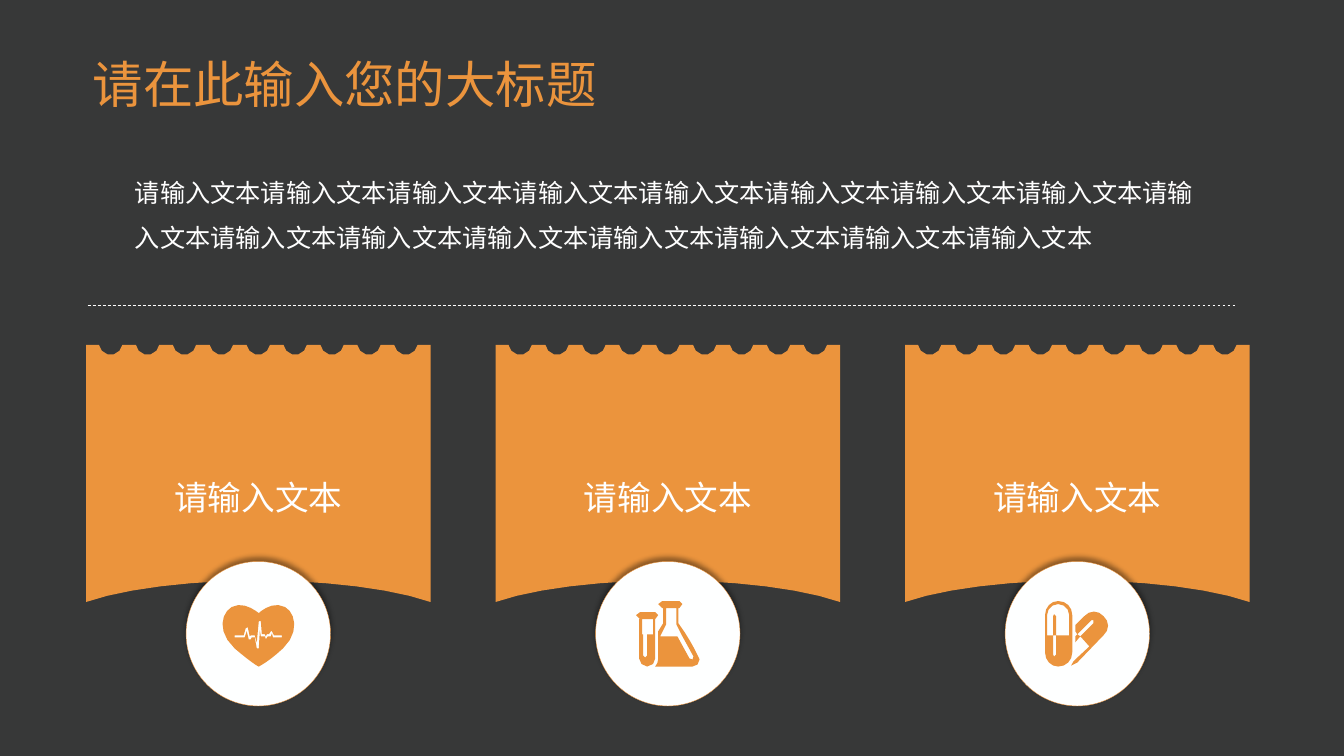
import math
from dataclasses import dataclass

from lxml import etree
from pptx import Presentation
from pptx.dml.color import RGBColor
from pptx.enum import dml, shapes, text
from pptx.oxml import parse_xml
from pptx.oxml.ns import nsdecls, qn
from pptx.util import Cm, Pt

TITLE = "请在此输入您的大标题"
BODY = "请输入文本" * 16

HEART = (83, 65, [
    [(15, 6), (26, 0, 38, 9, 42, 12), (45, 9, 57, 0, 68, 6), (78, 11, 83, 31, 66, 47),
     (52, 60, 42, 65, 42, 65), (41, 65, 32, 59, 18, 47), (0, 30, 5, 12, 15, 6)],
    [(18, 36), (28, 36), (30, 30), (32, 38), (34, 38), (35, 36), (38, 36), (40, 47),
     (42, 47), (43, 29), (44, 35), (48, 35), (49, 38), (51, 35), (54, 35), (55, 32),
     (56, 36), (65, 36), (65, 34), (57, 34), (55, 30), (54, 30), (52, 33), (50, 33),
     (49, 35), (48, 33), (45, 33), (44, 20), (42, 20), (40, 41), (38, 34), (34, 34),
     (33, 35), (31, 26), (29, 27), (27, 34), (18, 34)],
])
FLASKS = (63, 65, [
    [(42, 22), (42, 7), (43, 7), (45, 7, 46, 5, 46, 3), (46, 2, 45, 0, 43, 0), (26, 0),
     (24, 0, 22, 2, 22, 3), (22, 5, 24, 7, 26, 7), (27, 7), (27, 22), (22, 30), (22, 57),
     (22, 60, 21, 63, 19, 65), (56, 65), (60, 65, 63, 62, 63, 58), (63, 58, 56, 41, 42, 22)],
    [(56, 58), (53, 57), (41, 35), (24, 35), (30, 23), (30, 7), (40, 7), (40, 23),
     (46, 35), (57, 55)],
    [(19, 18), (21, 18, 22, 16, 22, 14), (22, 12, 21, 11, 19, 11), (4, 11),
     (2, 11, 0, 12, 0, 14), (0, 16, 2, 18, 4, 18), (3, 18), (3, 57),
     (3, 61, 7, 65, 11, 65), (16, 65, 19, 61, 19, 57)],
    [(17, 33), (11, 33), (11, 54), (9, 56), (7, 54), (7, 33), (6, 33), (6, 18), (17, 18)],
])
PILLS = (64, 65, [
    [(58, 34), (32, 61), (26, 64), (28, 60), (30, 58), (44, 45), (35, 35), (48, 22),
     (48, 19), (46, 19), (32, 33), (30, 30), (30, 24), (39, 15),
     (44, 9, 53, 9, 58, 15), (64, 20, 64, 29, 58, 34)],
    [(30, 41), (30, 35), (32, 33), (35, 35)],
    [(13, 65), (6, 65, 0, 59, 0, 51), (0, 14), (0, 6, 6, 0, 13, 0),
     (21, 0, 27, 6, 27, 14), (27, 51), (27, 59, 21, 65, 13, 65)],
    [(24, 14), (24, 8, 19, 3, 13, 3), (7, 3, 2, 8, 2, 14), (2, 34), (8, 34), (8, 53),
     (9, 55), (11, 53), (11, 34), (24, 34)],
    [(9, 13), (11, 15), (11, 34), (8, 34), (8, 15)],
])
CARDS = [("请输入文本", HEART), ("请输入文本", FLASKS), ("请输入文本", PILLS)]

CARD_LEFT, CARD_TOP, CARD_PITCH = 2.17, 8.69, 10.32
CARD_WIDTH, CARD_HEIGHT, ARCH_TOP = 8.68, 6.48, 5.94
NOTCH_COUNT, NOTCH_PITCH, NOTCH_RADIUS, NOTCH_RISE = 9, 0.93, 0.3, 0.05
NOTCH_STEPS, CURVE_STEPS, CURVE_STEP = 5, 6, Cm(0.13)
BADGE_TOP, BADGE_SIZE = 14.15, 3.64
ICON_UNIT = Cm(0.0254)


@dataclass(frozen=True)
class Theme:
    font: str = "Noto Sans CJK SC"
    background: RGBColor = RGBColor(0x37, 0x38, 0x38)
    accent: RGBColor = RGBColor(0xEB, 0x94, 0x3D)
    badge: RGBColor = RGBColor(0xFE, 0xFF, 0xFF)
    white: RGBColor = RGBColor(0xFF, 0xFF, 0xFF)
    title_size: int = 36
    card_size: int = 24
    body_size: int = 18


THEME = Theme()


def flatten(contour, unit):
    points = [contour[0]]
    for segment in contour[1:]:
        if len(segment) == 2:
            points.append(segment)
            continue
        x0, y0 = points[-1]
        x1, y1, x2, y2, x3, y3 = segment
        chord = math.hypot(x3 - x0, y3 - y0) * unit
        steps = max(1, min(CURVE_STEPS, round(chord / CURVE_STEP)))
        for step in range(1, steps + 1):
            t = step / steps
            a, b, c, d = (1 - t) ** 3, 3 * t * (1 - t) ** 2, 3 * t * t * (1 - t), t ** 3
            points.append((a * x0 + b * x1 + c * x2 + d * x3,
                           a * y0 + b * y1 + c * y2 + d * y3))
    return points


def card_outline():
    middle = CARD_WIDTH / 2
    start = math.asin(NOTCH_RISE / NOTCH_RADIUS)
    outline = [(0, 0)]
    for notch in range(NOTCH_COUNT):
        centre = middle + (notch - (NOTCH_COUNT - 1) / 2) * NOTCH_PITCH
        for step in range(NOTCH_STEPS + 1):
            angle = math.pi - start - (math.pi - 2 * start) * step / NOTCH_STEPS
            outline.append((centre + NOTCH_RADIUS * math.cos(angle),
                            NOTCH_RADIUS * math.sin(angle) - NOTCH_RISE))
    outline += [
        (CARD_WIDTH, 0), (CARD_WIDTH, CARD_HEIGHT),
        (CARD_WIDTH - 0.95, 6.15, middle + 1.75, ARCH_TOP, middle, ARCH_TOP),
        (middle - 1.75, ARCH_TOP, 0.95, 6.15, 0, CARD_HEIGHT),
    ]
    return outline


def add_outline(slide, contours, left, top, unit):
    builder = None
    for contour in contours:
        points = [(left + x * unit, top + y * unit) for x, y in flatten(contour, unit)]
        if builder is None:
            builder = slide.shapes.build_freeform(*points[0], scale=1.0)
        else:
            builder.move_to(*points[0])
        builder.add_line_segments(points[1:], close=True)
    shape = builder.convert_to_shape()
    shape.shadow.inherit = False
    shape.fill.solid()
    shape.fill.fore_color.rgb = THEME.accent
    shape.line.fill.background()
    return shape


def write(shape, content, size, color, spacing, alignment=text.PP_ALIGN.LEFT):
    frame = shape.text_frame
    frame.text = content
    frame.word_wrap = True
    frame.auto_size = text.MSO_AUTO_SIZE.NONE
    frame.vertical_anchor = text.MSO_ANCHOR.MIDDLE
    paragraph = frame.paragraphs[0]
    paragraph.alignment = alignment
    paragraph.line_spacing = spacing
    font = paragraph.runs[0].font
    font.size = Pt(size)
    font.color.rgb = color
    font.name = THEME.font
    etree.SubElement(font._element, qn("a:ea")).set("typeface", THEME.font)


def add_badge(slide, left):
    badge = slide.shapes.add_shape(shapes.MSO_SHAPE.OVAL, Cm(left), Cm(BADGE_TOP),
                                   Cm(BADGE_SIZE), Cm(BADGE_SIZE))
    badge.fill.solid()
    badge.fill.fore_color.rgb = THEME.badge
    badge.line.color.rgb = THEME.accent
    badge.line.width = Pt(0.25)
    badge._element.spPr.append(parse_xml(
        f'<a:effectLst {nsdecls("a")}><a:outerShdw blurRad="{Pt(4)}" dist="{Pt(3)}" '
        'dir="16200000" rotWithShape="0"><a:srgbClr val="000000"><a:alpha val="40000"/>'
        '</a:srgbClr></a:outerShdw></a:effectLst>'))


def add_card(slide, index, label, icon):
    left = CARD_LEFT + index * CARD_PITCH
    card = add_outline(slide, [card_outline()], Cm(left), Cm(CARD_TOP), Cm(1))
    write(card, label, THEME.card_size, THEME.white, 1.5, text.PP_ALIGN.CENTER)
    card.text_frame.margin_top = Cm(0.79)
    centre = left + CARD_WIDTH / 2
    add_badge(slide, centre - BADGE_SIZE / 2)
    width, height, contours = icon
    add_outline(slide, contours, Cm(centre) - width * ICON_UNIT / 2,
                Cm(BADGE_TOP + BADGE_SIZE / 2) - height * ICON_UNIT / 2, ICON_UNIT)


def main():
    presentation = Presentation()
    presentation.slide_width, presentation.slide_height = Cm(33.87), Cm(19.05)
    slide = presentation.slides.add_slide(presentation.slide_layouts[5])
    slide.background.fill.solid()
    slide.background.fill.fore_color.rgb = THEME.background

    title = slide.shapes.title
    title.left, title.top, title.width, title.height = Cm(2.08), Cm(1.02), Cm(29.67), Cm(2.36)
    write(title, TITLE, THEME.title_size, THEME.accent, 0.9)

    for index, (label, icon) in enumerate(CARDS):
        add_card(slide, index, label, icon)

    divider = slide.shapes.add_connector(shapes.MSO_CONNECTOR.STRAIGHT,
                                         Cm(2.21), Cm(7.7), Cm(31.12), Cm(7.7))
    divider.line.color.rgb = THEME.white
    divider.line.width = Pt(0.5)
    divider.line.dash_style = dml.MSO_LINE.DASH
    etree.SubElement(divider._element.spPr, qn("a:effectLst"))

    body = slide.shapes.add_textbox(Cm(3.15), Cm(3.91), Cm(27.56), Cm(2.62))
    write(body, BODY, THEME.body_size, THEME.white, 1.5)
    presentation.save("out.pptx")


if __name__ == "__main__":
    main()
